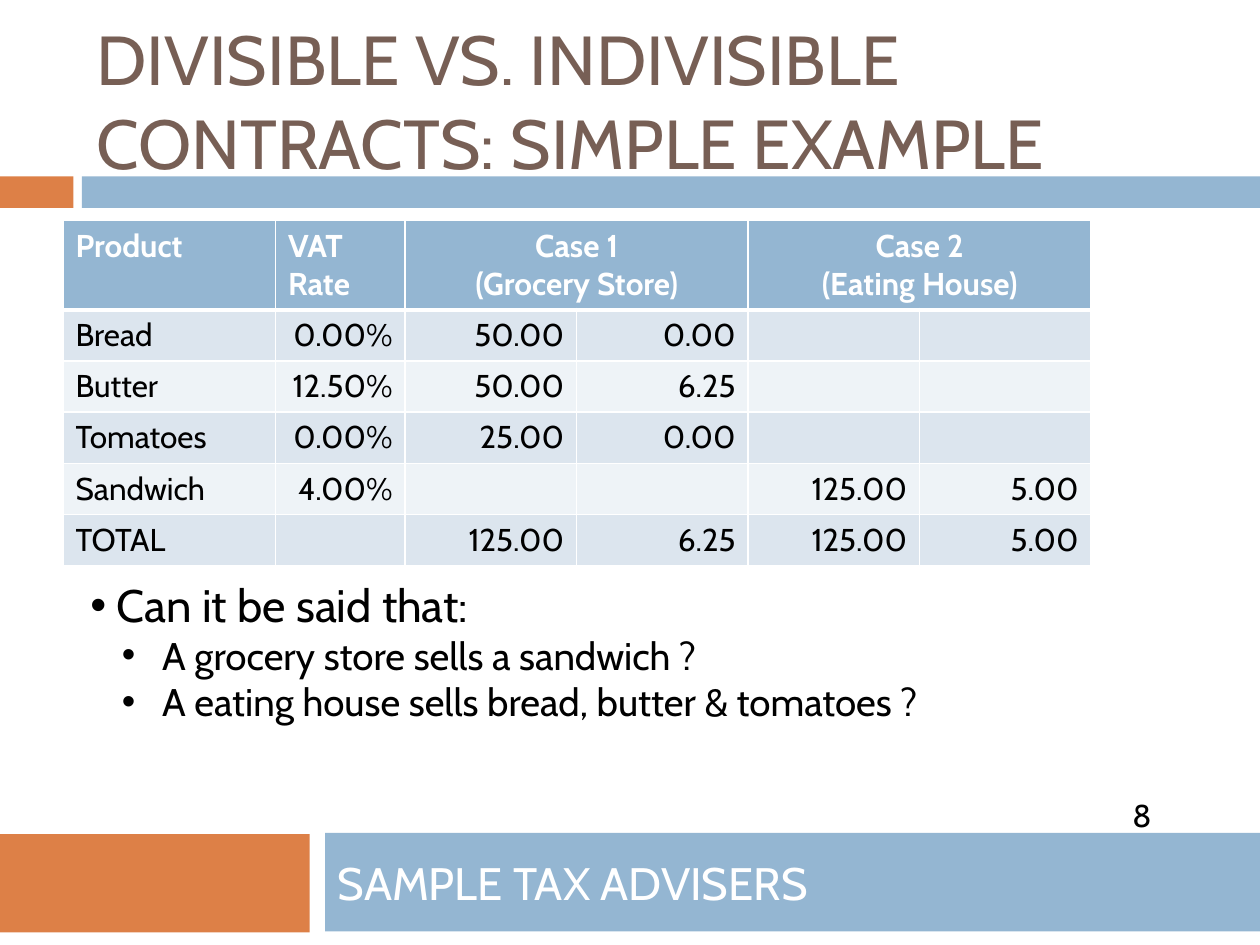
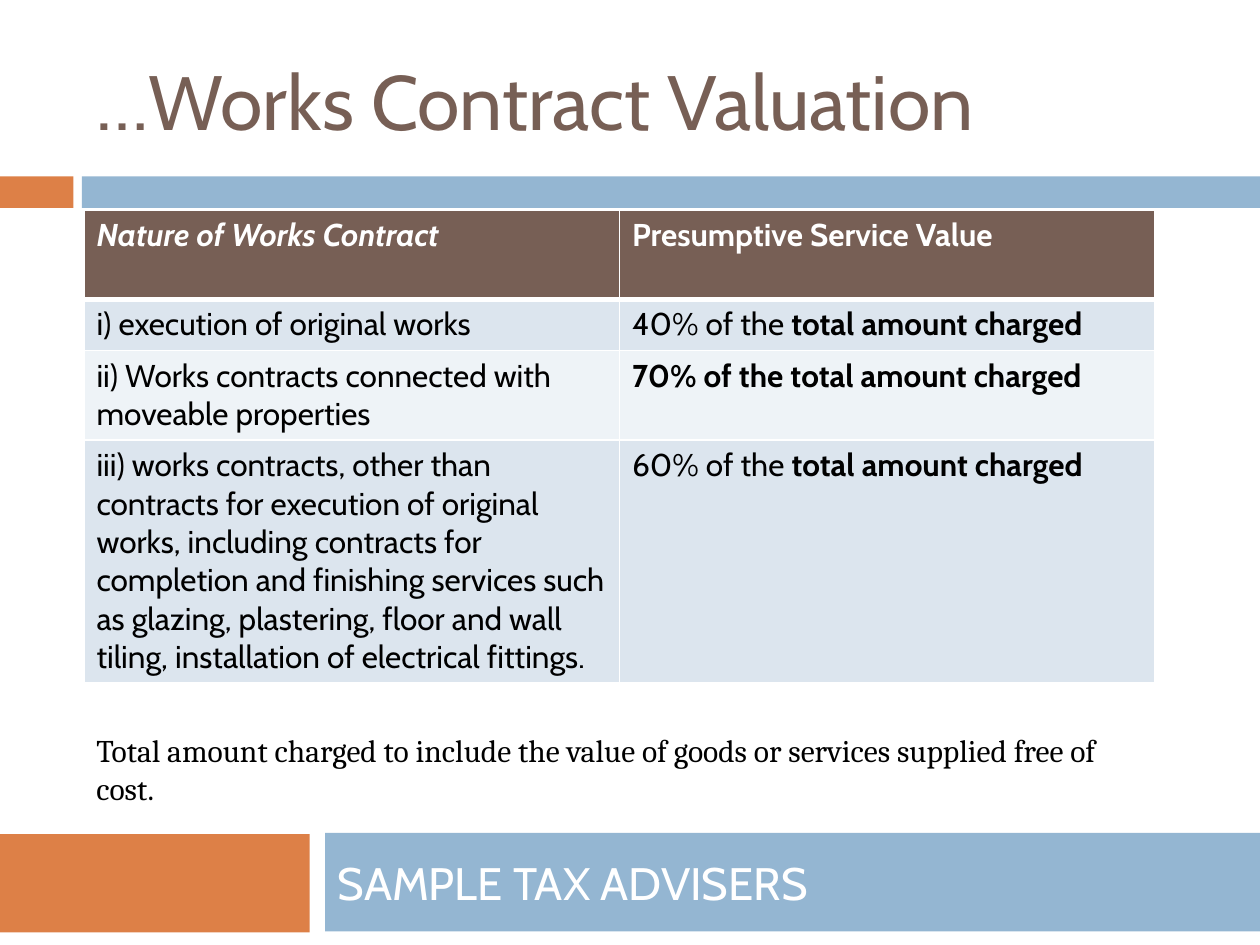
from dataclasses import dataclass

from lxml.etree import SubElement
from pptx import Presentation
from pptx.dml.color import RGBColor
from pptx.enum.shapes import MSO_SHAPE
from pptx.enum.text import MSO_ANCHOR, MSO_AUTO_SIZE, PP_ALIGN
from pptx.oxml.ns import qn
from pptx.util import Pt


@dataclass(frozen=True)
class Theme:
    blue: str = "94B6D2"
    orange: str = "DD8047"
    brown: str = "775F55"
    white: str = "FFFFFF"
    black: str = "000000"
    stripes: tuple = ("DCE5EE", "EEF3F7")
    font: str = "Cabin"
    serif: str = "Cambria"
    title: float = 44
    long_title: float = 39.6
    large: float = 26
    medium: float = 22
    body: float = 18


THEME = Theme()
LEFT, MIDDLE, RIGHT = PP_ALIGN.LEFT, PP_ALIGN.CENTER, PP_ALIGN.RIGHT

# Content: a cell is a string, or a list of (text, style) runs; b bold, i italic
FIRM = "SAMPLE TAX ADVISERS"
VAT = {
    "title": "DIVISIBLE VS. INDIVISIBLE CONTRACTS: SIMPLE EXAMPLE",
    "rows": [
        ["Product", "VAT Rate", "Case 1\n(Grocery Store)", "",
         "Case 2\n(Eating House)", ""],
        ["Bread", "0.00%", "50.00", "0.00", "", ""],
        ["Butter", "12.50%", "50.00", "6.25", "", ""],
        ["Tomatoes", "0.00%", "25.00", "0.00", "", ""],
        ["Sandwich", "4.00%", "", "", "125.00", "5.00"],
        ["TOTAL", "", "125.00", "6.25", "125.00", "5.00"],
    ],
    "merges": [(2, 3), (4, 5)],
    "bullets": [
        (0, "Can it be said that:"),
        (1, "A grocery store sells a sandwich ?"),
        (1, "A eating house sells bread, butter & tomatoes ?"),
    ],
    "page": "8",
}
WORKS = {
    "title": "…Works Contract Valuation",
    "rows": [
        [[("Nature of Works Contract", "bi")], "Presumptive Service Value"],
        ["i) execution of original works",
         [("40% of the ", ""), ("total amount charged", "b")]],
        ["ii) Works contracts connected with moveable properties",
         [("70% of the total amount charged", "b")]],
        ["iii) works contracts, other than contracts for execution of original "
         "works, including contracts for completion and finishing services such "
         "as glazing, plastering, floor and wall tiling, installation of "
         "electrical fittings.",
         [("60% of the ", ""), ("total amount charged", "b")]],
    ],
    "note": "Total amount charged to include the value of goods or services "
            "supplied free of cost.",
}

# Bands: left, top, width, height, colour, text
BANDS = [
    (0, 100.8, 42, 18, THEME.orange, ""),
    (46.8, 100.8, 673.2, 18, THEME.blue, ""),
    (0, 476.6, 177, 56.2, THEME.orange, ""),
    (185.8, 476, 534.2, 56.2, THEME.blue, FIRM),
]
# Bullet levels: text indent, hang, size
LEVELS = [(15, 15, THEME.large), (41, 23, THEME.medium)]


def rgb(code):
    return RGBColor.from_string(code)


def add_run(para, text, size, color=THEME.black, font=THEME.font, style=""):
    run = para.add_run()
    run.text = text
    run.font.name = font
    run.font.size = Pt(size)
    run.font.color.rgb = rgb(color)
    run.font.bold = "b" in style
    run.font.italic = "i" in style


def add_paras(frame, count):
    """Return the first paragraph of an empty frame and as many new ones as needed."""
    return [frame.paragraphs[0]] + [frame.add_paragraph() for _ in range(count - 1)]


def add_box(slide, *box):
    frame = slide.shapes.add_textbox(*map(Pt, box)).text_frame
    frame.word_wrap = True
    return frame


def add_bands(slide):
    for *box, color, text in BANDS:
        band = slide.shapes.add_shape(MSO_SHAPE.RECTANGLE, *map(Pt, box))
        band.shadow.inherit = False
        band.fill.solid()
        band.fill.fore_color.rgb = rgb(color)
        band.line.fill.background()
        if text:
            band.text_frame.vertical_anchor = MSO_ANCHOR.MIDDLE
            para = band.text_frame.paragraphs[0]
            para.alignment = LEFT
            add_run(para, text, THEME.large, THEME.white)


def add_slide(deck, title, size):
    slide = deck.slides.add_slide(deck.slide_layouts[5])
    add_bands(slide)
    head = slide.shapes.title
    head.left, head.top, head.width, head.height = map(Pt, (48, 18, 642, 78))
    frame = head.text_frame
    frame.word_wrap = True
    frame.auto_size = MSO_AUTO_SIZE.NONE
    frame.vertical_anchor = MSO_ANCHOR.MIDDLE
    frame.paragraphs[0].alignment = LEFT
    add_run(frame.paragraphs[0], title, size, THEME.brown)
    return slide


def add_rules(cell, row):
    """Draw white cell borders, thicker between the header and the body."""
    widths = {"L": 1, "R": 1, "T": 3 if row == 1 else 1, "B": 3 if row == 0 else 1}
    props = cell._tc.get_or_add_tcPr()
    for side, width in widths.items():
        line = SubElement(props, qn(f"a:ln{side}"), w=str(Pt(width)))
        fill = SubElement(line, qn("a:solidFill"))
        SubElement(fill, qn("a:srgbClr"), val=THEME.white)


def fill_cell(cell, value, row, color, align):
    add_rules(cell, row)
    cell.fill.solid()
    cell.fill.fore_color.rgb = rgb(color)
    ink, style = (THEME.white, "b") if row == 0 else (THEME.black, "")
    if isinstance(value, str):
        lines = [[(line, style)] for line in value.split("\n")]
    else:
        lines = [value]
    for para, runs in zip(add_paras(cell.text_frame, len(lines)), lines):
        para.alignment = align
        para.font.size = Pt(THEME.body)
        for text, look in runs:
            if text:
                add_run(para, text, THEME.body, ink, style=look)


def add_grid(slide, rows, spot, widths, heights, head, align, merges=()):
    """Add a striped table; align(row, col) gives each cell's alignment."""
    left, top = spot
    table = slide.shapes.add_table(
        len(rows), len(widths), Pt(left), Pt(top),
        Pt(sum(widths)), Pt(sum(heights))).table
    for col, width in zip(table.columns, widths):
        col.width = Pt(width)
    for line, height in zip(table.rows, heights):
        line.height = Pt(height)
    for r, values in enumerate(rows):
        color = THEME.stripes[(r - 1) % 2] if r else head
        for c, value in enumerate(values):
            fill_cell(table.cell(r, c), value, r, color, align(r, c))
    for start, end in merges:
        table.cell(0, start).merge(table.cell(0, end))


def add_bullets(slide, items, *box):
    frame = add_box(slide, *box)
    for para, (level, text) in zip(add_paras(frame, len(items)), items):
        indent, hang, size = LEVELS[level]
        para.level = level
        props = para._p.get_or_add_pPr()
        props.set("marL", str(Pt(indent)))
        props.set("indent", str(-Pt(hang)))
        SubElement(props, qn("a:buFont"), typeface="Arial")
        SubElement(props, qn("a:buChar"), char="•")
        add_run(para, text, size)


def vat_align(row, col):
    if row == 0:
        return MIDDLE if col > 1 else LEFT
    return RIGHT if col else LEFT


def add_vat(deck):
    slide = add_slide(deck, VAT["title"], THEME.long_title)
    add_grid(slide, VAT["rows"], (36, 126), [121.4, 74.2] + [98] * 4,
             [51] + [29.2] * 5, THEME.blue, vat_align, VAT["merges"])
    page = add_box(slide, 640, 451.4, 48, 41)
    add_run(page.paragraphs[0], VAT["page"], THEME.body)
    add_bullets(slide, VAT["bullets"], 44.6, 326.2, 579.6, 92)


def add_works(deck):
    slide = add_slide(deck, WORKS["title"], THEME.title)
    add_grid(slide, WORKS["rows"], (48, 120), [306] * 2, [51, 29.2, 51, 138.6],
             THEME.brown, lambda row, col: LEFT)
    note = add_box(slide, 48, 414, 606, 51)
    add_run(note.paragraphs[0], WORKS["note"], THEME.body, font=THEME.serif)


def main():
    deck = Presentation()
    deck.slide_width, deck.slide_height = Pt(720), Pt(540)
    add_vat(deck)
    add_works(deck)
    deck.save("out.pptx")


if __name__ == "__main__":
    main()
